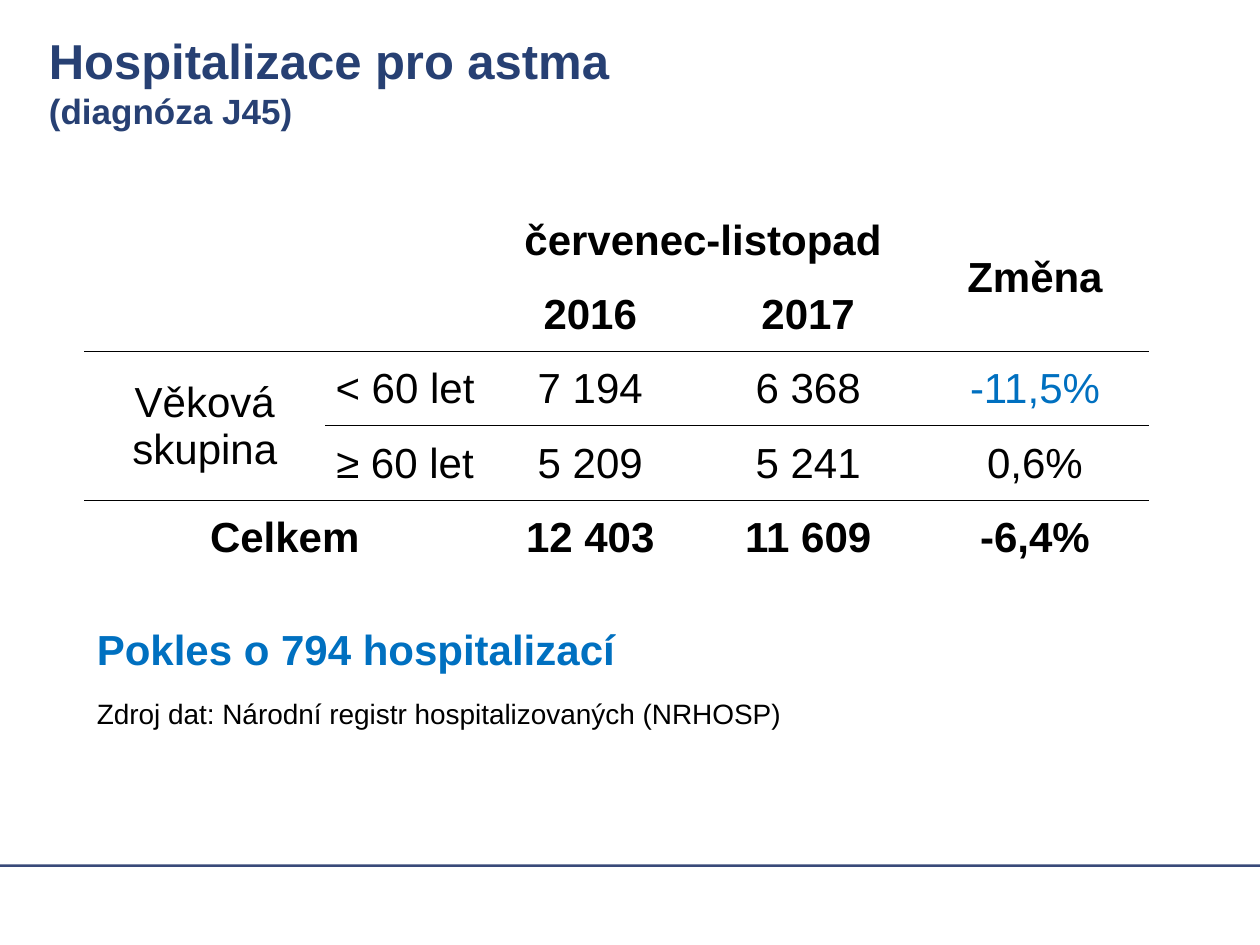
from lxml import etree
from pptx import Presentation
from pptx.dml.color import RGBColor
from pptx.enum.shapes import MSO_SHAPE
from pptx.enum.text import MSO_ANCHOR, PP_ALIGN
from pptx.oxml.ns import qn
from pptx.util import Inches, Pt

COLORS = {"navy": "274073", "rule": "394A79", "blue": "0070C0", "black": "000000"}
NO_STYLE = "{2D5ABB26-0587-4C30-8999-92F81FD0307C}"


class SlideBuilder:
    font_name = "Arial"

    def __init__(self, slide):
        self.slide = slide

    def color(self, name):
        return RGBColor.from_string(COLORS[name])

    def format_run(self, run, color="black", **formats):
        for name, value in {"name": self.font_name, **formats}.items():
            setattr(run.font, name, value)
        run.font.color.rgb = self.color(color)

    def bar(self, left, top, width, height, color):
        bar = self.slide.shapes.add_shape(
            MSO_SHAPE.RECTANGLE, *map(Inches, (left, top, width, height)))
        bar.shadow.inherit = False
        bar.fill.solid()
        bar.fill.fore_color.rgb = self.color(color)
        bar.line.fill.background()

    def text(self, left, top, width, height, lines, anchor=MSO_ANCHOR.TOP):
        """Each line is a pair of wording and run formats."""
        box = self.slide.shapes.add_textbox(*map(Inches, (left, top, width, height)))
        frame = box.text_frame
        frame.word_wrap = True
        frame.vertical_anchor = anchor
        paragraph = frame.paragraphs[0]
        for index, (wording, formats) in enumerate(lines):
            if index:
                paragraph.add_line_break()
            run = paragraph.add_run()
            run.text = wording
            self.format_run(run, **formats)

    def border(self, cell, edge):
        """Add a thin line; call for the top edge last."""
        line = etree.Element(qn(f"a:ln{edge}"), w=str(Pt(0.5)))
        fill = etree.SubElement(line, qn("a:solidFill"))
        etree.SubElement(fill, qn("a:srgbClr"), val=COLORS["black"])
        cell._tc.get_or_add_tcPr().insert(0, line)

    def table(self, left, top, widths, row_height, rows, merges, bold_rows, accents):
        table = self.slide.shapes.add_table(
            len(rows), len(widths), Inches(left), Inches(top),
            Inches(sum(widths)), Inches(row_height * len(rows))).table
        table.first_row = table.horz_banding = False
        table._tbl.tblPr.find(qn("a:tableStyleId")).text = NO_STYLE
        for column, width in zip(table.columns, widths):
            column.width = Inches(width)
        for r, values in enumerate(rows):
            table.rows[r].height = Inches(row_height)
            for c, value in enumerate(values):
                cell = table.cell(r, c)
                cell_formats = {
                    "margin_left": Inches(0.01), "margin_right": Inches(0.01),
                    "margin_top": Inches(0.01), "margin_bottom": 0,
                    "vertical_anchor": MSO_ANCHOR.MIDDLE,
                }
                for name, setting in cell_formats.items():
                    setattr(cell, name, setting)
                cell.fill.background()
                paragraph = cell.text_frame.paragraphs[0]
                paragraph.alignment = PP_ALIGN.CENTER
                paragraph.font.size = Pt(24)
                if value:
                    run = paragraph.add_run()
                    run.text = value
                    self.format_run(run, accents.get((r, c), "black"),
                                    size=Pt(24), bold=r in bold_rows)
        for start, end in merges:
            table.cell(*start).merge(table.cell(*end))
        return table


prs = Presentation()
prs.slide_width, prs.slide_height = Inches(10), Inches(7.5)
page = SlideBuilder(prs.slides.add_slide(prs.slide_layouts[6]))

# Footer rule
page.bar(0, 6.86, 10, 0.02, "rule")

# Title
page.text(0.29, 0.29, 9.43, 0.71, [
    ("Hospitalizace pro astma", {"size": Pt(28), "bold": True, "color": "navy"}),
    ("(diagnóza J45)", {"size": Pt(20), "bold": True, "color": "navy"}),
], MSO_ANCHOR.MIDDLE)

# Hospitalizations by age group
hospitalizations = page.table(
    0.67, 1.61, [1.91, 1.27, 1.67, 1.79, 1.81], 0.59,
    rows=[
        ["", "", "červenec-listopad", "", "Změna"],
        ["", "", "2016", "2017", ""],
        ["Věková skupina", "< 60 let", "7 194", "6 368", "-11,5%"],
        ["", "≥ 60 let", "5 209", "5 241", "0,6%"],
        ["Celkem", "", "12 403", "11 609", "-6,4%"],
    ],
    merges=[((0, 2), (0, 3)), ((0, 4), (1, 4)), ((2, 0), (3, 0)), ((4, 0), (4, 1))],
    bold_rows={0, 1, 4},
    accents={(2, 4): "blue"},
)

# Lines above the age groups and above the total
page.border(hospitalizations.cell(2, 0), "B")
for row in (2, 4):
    for column in range(len(hospitalizations.columns)):
        page.border(hospitalizations.cell(row - 1, column), "B")
        page.border(hospitalizations.cell(row, column), "T")

# Conclusion and data source
page.text(0.67, 4.9, 7.81, 0.5, [
    ("Pokles o 794 hospitalizací", {"size": Pt(24), "bold": True, "color": "blue"})])
page.text(0.67, 5.48, 8.97, 0.37, [
    ("Zdroj dat: Národní registr hospitalizovaných (NRHOSP)", {"size": Pt(16)})])

prs.save("out.pptx")
